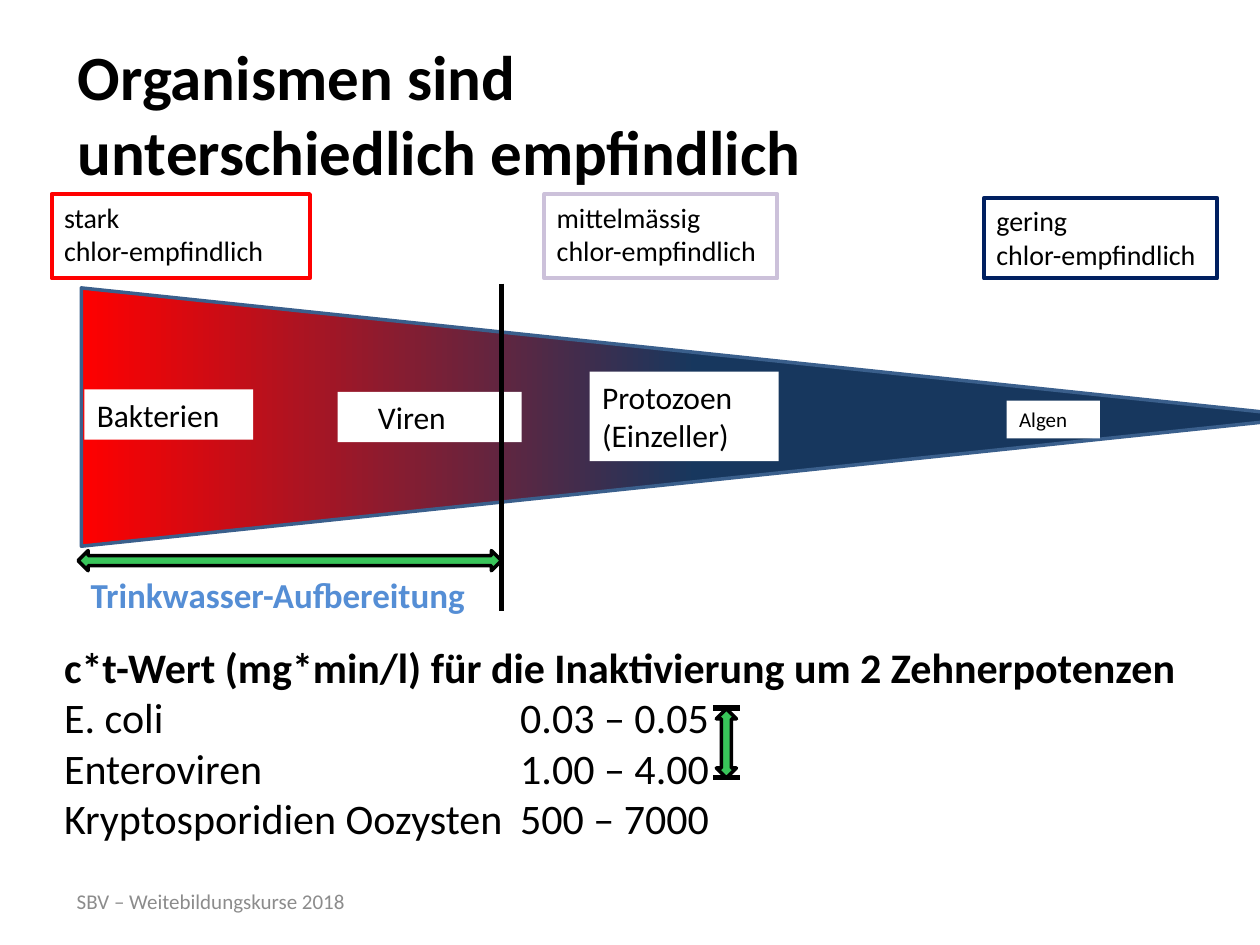
from pptx import Presentation
from pptx.dml.color import RGBColor
from pptx.enum.shapes import MSO_CONNECTOR, MSO_SHAPE
from pptx.enum.text import MSO_ANCHOR, PP_ALIGN
from pptx.oxml.ns import qn
from pptx.util import Inches, Pt
from lxml import etree

STRAIGHT = MSO_CONNECTOR.STRAIGHT
RECTANGLE = MSO_SHAPE.RECTANGLE
TRIANGLE = MSO_SHAPE.ISOSCELES_TRIANGLE
DOUBLE_ARROW = MSO_SHAPE.LEFT_RIGHT_ARROW
TOP, MIDDLE = MSO_ANCHOR.TOP, MSO_ANCHOR.MIDDLE
LEFT = PP_ALIGN.LEFT

COLORS = {
    "black": "000000", "white": "FFFFFF", "grey": "8C8C8C", "sky": "558ED5",
    "red": "FF0000", "lilac": "CCC1DA", "navy": "002060", "deep": "17375E",
    "edge": "3A5F8C", "green": "39C55A",
}


def color(name):
    """Return the named colour."""
    return RGBColor.from_string(COLORS[name])


class SlideBuilder:
    """Holds the text style and the current slide."""

    font = "Calibri"

    def __init__(self, slide):
        """Keep the slide to draw on."""
        self.slide = slide

    def fill_text(self, box, lines, size, ink="black", bold=False, anchor=TOP,
                  wrap=True, inset=0.1, tab=None):
        """Fill a box with one paragraph per line."""
        frame = box.text_frame
        layout = {"word_wrap": wrap, "vertical_anchor": anchor,
                  "margin_left": Inches(inset)}
        for name, value in layout.items():
            setattr(frame, name, value)
        for index, line in enumerate(lines):
            para = frame.paragraphs[0] if index == 0 else frame.add_paragraph()
            para.text = line
            para.alignment = LEFT
            if tab and "\t" in line:
                stops = etree.SubElement(para._p.get_or_add_pPr(), qn("a:tabLst"))
                etree.SubElement(stops, qn("a:tab"), pos=str(Inches(tab)), algn="l")
            style = {"name": self.font, "size": Pt(size), "bold": bold}
            for span in para.runs:
                for name, value in style.items():
                    setattr(span.font, name, value)
                span.font.color.rgb = color(ink)

    def text(self, place, lines, size, **style):
        """Add a text box."""
        box = self.slide.shapes.add_textbox(*map(Inches, place))
        self.fill_text(box, lines, size, **style)
        return box

    def shape(self, kind, place, fill=None, line=None, width=2, turn=0):
        """Add a preset shape."""
        shape = self.slide.shapes.add_shape(kind, *map(Inches, place))
        shape.shadow.inherit = False
        shape.rotation = turn
        if fill:
            shape.fill.solid()
            shape.fill.fore_color.rgb = color(fill)
        else:
            shape.fill.background()
        if line:
            shape.line.color.rgb = color(line)
            shape.line.width = Pt(width)
        else:
            shape.line.fill.background()
        return shape

    def label(self, place, caption, size, fill=None, line=None, inset=0.1):
        """Add a rectangle with a caption."""
        box = self.shape(RECTANGLE, place, fill, line, 2.25)
        self.fill_text(box, [caption], size, inset=inset)

    def wedge(self, place, stops):
        """Add the triangle pointing right with a gradient along its length."""
        wedge = self.shape(TRIANGLE, place, line="edge", turn=90)
        wedge.fill.gradient()
        wedge.fill.gradient_angle = 270
        for stop, (position, name) in zip(wedge.fill.gradient_stops, stops):
            stop.position = position
            stop.color.rgb = color(name)

    def line(self, start, end):
        """Add a thick black line."""
        line = self.slide.shapes.add_connector(STRAIGHT, *map(Inches, start + end))
        line.line.color.rgb = color("black")
        line.line.width = Pt(3)
        etree.SubElement(line._element.spPr, qn("a:effectLst"))


def main():
    """Build the slide and save the deck."""
    deck = Presentation()
    deck.slide_width, deck.slide_height = Inches(10), Inches(7.5)
    page = SlideBuilder(deck.slides.add_slide(deck.slide_layouts[6]))

    page.text((0.52, 0.36, 8.5, 1.07),
              ["Organismen sind \vunterschiedlich empfindlich"], 36,
              bold=True, anchor=MIDDLE)
    page.text((0.51, 6.95, 3.55, 0.4), ["SBV – Weitebildungskurse 2018"], 12,
              ink="grey", anchor=MIDDLE)
    page.text((0.62, 4.5, 3.22, 0.44), ["Trinkwasser-Aufbereitung"], 20,
              ink="sky", bold=True, wrap=False)

    values = page.text((0.41, 5.04, 9.48, 1.72), [
        "c*t-Wert (mg*min/l) für die Inaktivierung um 2 Zehnerpotenzen",
        "E. coli \t0.03 – 0.05",
        "Enteroviren \t1.00 – 4.00",
        "Kryptosporidien Oozysten \t500 – 7000",
    ], 24, tab=3.62)
    values.text_frame.paragraphs[0].runs[0].font.bold = True

    page.wedge((4.5, -1.57, 2.05, 9.76), [(0.5, "deep"), (1, "red")])

    for degree, place, line in [
        ("stark", (0.41, 1.54, 2.05, 0.67), "red"),
        ("mittelmässig", (4.32, 1.54, 1.85, 0.67), "lilac"),
        ("gering", (7.81, 1.57, 1.85, 0.64), "navy"),
    ]:
        page.label(place, f"{degree} \vchlor-empfindlich", 16, line=line)

    for organism, place, size, inset in [
        ("Bakterien", (0.67, 3.09, 1.34, 0.4), 18, 0.1),
        ("Protozoen (Einzeller)", (4.68, 2.95, 1.5, 0.71), 18, 0.1),
        ("Viren", (2.68, 3.11, 1.46, 0.4), 18, 0.32),
        ("Algen", (7.99, 3.18, 0.74, 0.3), 12, 0.1),
    ]:
        page.label(place, organism, size, fill="white", inset=inset)

    page.line((3.98, 2.25), (3.98, 4.85))
    for place, turn in [((0.62, 4.37, 3.36, 0.16), 0), ((5.49, 5.82, 0.55, 0.16), 90)]:
        page.shape(DOUBLE_ARROW, place, "green", "black", turn=turn)
    for height in (5.62, 6.17):
        page.line((5.87, height), (5.66, height))

    deck.save("out.pptx")


if __name__ == "__main__":
    main()
